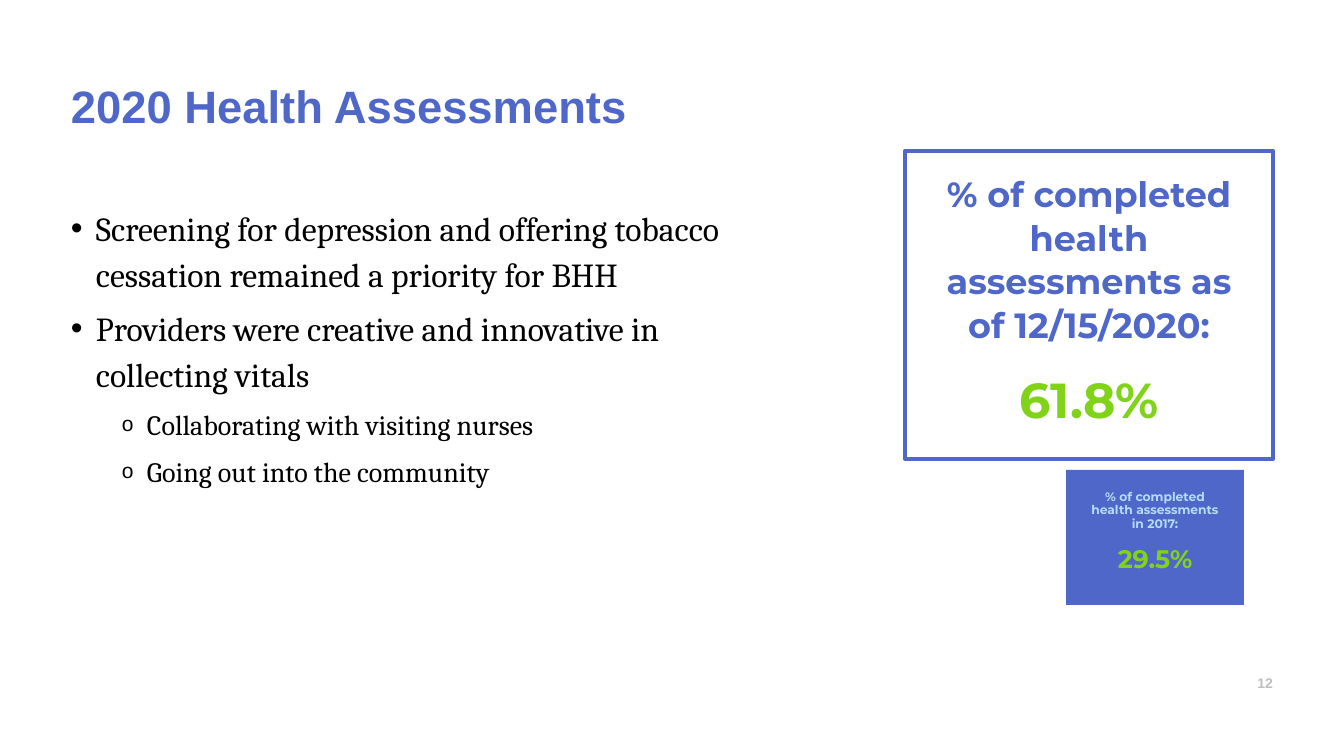
from lxml import etree
from pptx import Presentation
from pptx import util as u
from pptx.dml.color import RGBColor
from pptx.enum import shapes, text
from pptx.oxml.ns import qn

BLUE, GREEN, PALE = "4E67C8", "81D31A", "B4DCFA"
PX = 914400 / 100.8

TITLE = "2020 Health Assessments"
PAGE_NUMBER = "12"
# level, wording
POINTS = [
    (0, "Screening for depression and offering tobacco cessation remained a priority for BHH"),
    (0, "Providers were creative and innovative in collecting vitals"),
    (1, "Collaborating with visiting nurses"),
    (1, "Going out into the community"),
]
# bullet sign, bullet size in percent, text left in px, text size
LEVELS = [("•", 100, 25, 24), ("o", 75, 76, 20)]
HANGING = 25
# place in px, fill, outline, line spacing, label, figure, gap between them;
# label and figure are (wording, size, colour)
CARDS = [
    ((905, 151, 368, 308), "FFFFFF", BLUE, 1.04,
     ("% of completed health assessments as of 12/15/2020:", 25, BLUE),
     ("61.8%", 35.1, GREEN), 15),
    ((1066, 470, 178, 135), BLUE, None, 0.94,
     ("% of completed health assessments in 2017:", 8.8, PALE),
     ("29.5%", 18.1, GREEN), 10),
]


def px(length):
    return u.Emu(round(length * PX))


def colour(value):
    return RGBColor.from_string(value)


def prepare(shape, inset=0):
    frame = shape.text_frame
    frame.word_wrap = True
    frame.vertical_anchor = text.MSO_ANCHOR.TOP
    frame.margin_left = frame.margin_top = px(inset)
    frame.margin_right = frame.margin_bottom = px(inset)
    return frame


def add_box(place):
    return prepare(page.shapes.add_textbox(*map(px, place)))


def next_para(frame, index, align=text.PP_ALIGN.LEFT, spacing=1.0):
    para = frame.add_paragraph() if index else frame.paragraphs[0]
    para.alignment = align
    para.line_spacing = spacing
    return para


def write(para, wording, size, font, shade, bold=True):
    span = para.add_run()
    span.text = wording
    span.font.size = u.Pt(size)
    span.font.name = font
    span.font.bold = bold
    span.font.color.rgb = colour(shade)


def add_bullet(para, sign, percent, left):
    props = para._p.get_or_add_pPr()
    props.set("marL", str(px(left)))
    props.set("indent", str(-px(HANGING)))
    for tag, name, value in [("a:buSzPct", "val", str(percent * 1000)),
                             ("a:buFont", "typeface", "Arial"),
                             ("a:buChar", "char", sign)]:
        etree.SubElement(props, qn(tag)).set(name, value)


deck = Presentation()
deck.slide_width, deck.slide_height = px(1344), px(756)
page = deck.slides.add_slide(deck.slide_layouts[6])

# Page number and title
number = add_box((1217, 675, 56, 17))
write(next_para(number, 0, text.PP_ALIGN.RIGHT), PAGE_NUMBER, 10, "Arial", "BFBFBF")
title = add_box((71, 71, 1202, 60))
write(next_para(title, 0, spacing=1.14), TITLE, 32.4, "Arial", BLUE)

# Bulleted points
body = add_box((71, 202, 715, 403))
for index, (level, wording) in enumerate(POINTS):
    sign, percent, left, size = LEVELS[level]
    para = next_para(body, index, spacing=1.14)
    para.level = level
    para.space_after = u.Pt(6)
    add_bullet(para, sign, percent, left)
    write(para, wording, size, "Cambria", "000000", bold=False)

# Cards with a label and a figure
for place, fill, outline, spacing, label, figure, gap in CARDS:
    card = page.shapes.add_shape(shapes.MSO_SHAPE.RECTANGLE, *map(px, place))
    card.shadow.inherit = False
    card.fill.solid()
    card.fill.fore_color.rgb = colour(fill)
    if outline:
        card.line.color.rgb = colour(outline)
        card.line.width = u.Pt(3)
    else:
        card.line.fill.background()
    frame = prepare(card, inset=20)
    for index, (wording, size, shade) in enumerate((label, figure)):
        para = next_para(frame, index, text.PP_ALIGN.CENTER, spacing)
        if index:
            para.space_before = u.Pt(gap)
        write(para, wording, size, "Montserrat", shade)

deck.save("out.pptx")
